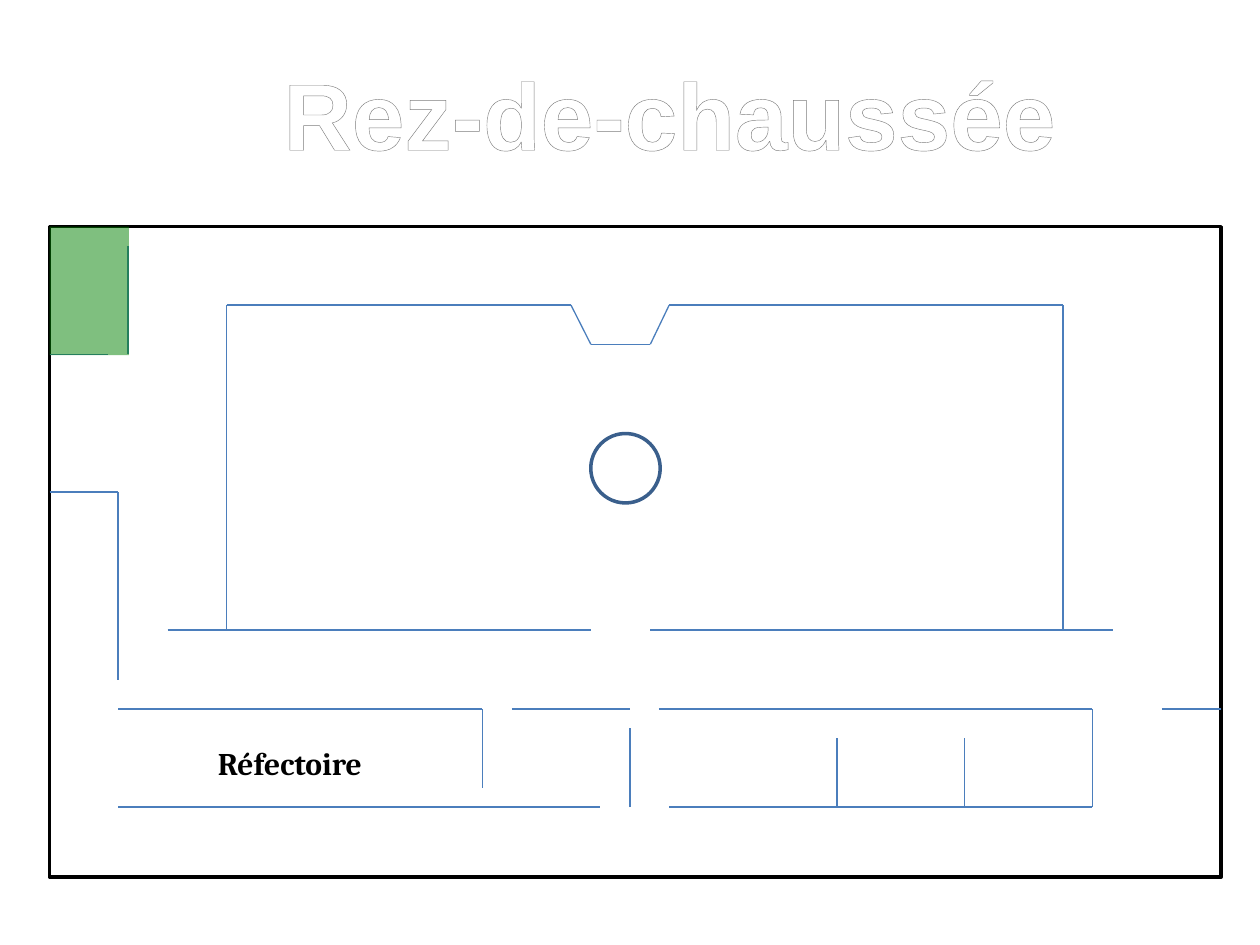
from lxml import etree
from pptx import Presentation
from pptx.dml.color import RGBColor
from pptx.enum.shapes import MSO_CONNECTOR, MSO_SHAPE
from pptx.enum.text import MSO_AUTO_SIZE, PP_ALIGN
from pptx.oxml import parse_xml
from pptx.oxml.ns import nsdecls, qn
from pptx.util import Cm, Pt

RECT, OVAL = MSO_SHAPE.RECTANGLE, MSO_SHAPE.OVAL
STRAIGHT = MSO_CONNECTOR.STRAIGHT
CENTER = PP_ALIGN.CENTER
GROW = MSO_AUTO_SIZE.SHAPE_TO_FIT_TEXT

COLORS = {"white": "FFFFFF", "black": "000000", "wall": "4B7EBC",
          "ring": "3A5F8C", "garden": "008000", "shine": "7F7F7F",
          "outline": "7D7D7D"}

BUILDING = (1, 4.57, 23.62, 13.11)
FOUNTAIN = (11.91, 8.74, 1.4, 1.4)
GARDEN = (1, 4.57, 1.6, 2.59)
TITLE = ("Rez-de-chaussée", (5.36, 1, 16.28, 2.57), "Arial", 54)
ROOM = ("Réfectoire", (2.38, 14.88, 6.93, 1.02), "Cambria", 18)
TITLE_STOPS = [(0, "white"), (9, "white"), (50, "shine"), (79, "white"), (100, "white")]

LEFT, RIGHT = 1, 24.61
COURT_LEFT, COURT_RIGHT, COURT_TOP, COURT_BOTTOM = 4.57, 21.43, 6.15, 12.7
HALL_LEFT, HALL_RIGHT, HALL_TOP, HALL_BOTTOM = 2.38, 22.02, 14.29, 16.27
NICHE_BOTTOM = 6.94

WALLS = [
    [(2.58, 4.96), (2.58, 7.14)],
    [(2.18, 7.14), (LEFT, 7.14)],
    [(COURT_LEFT, COURT_BOTTOM), (COURT_LEFT, COURT_TOP), (11.51, COURT_TOP),
     (11.91, NICHE_BOTTOM), (13.11, NICHE_BOTTOM), (13.49, COURT_TOP),
     (COURT_RIGHT, COURT_TOP), (COURT_RIGHT, COURT_BOTTOM)],
    [(3.38, COURT_BOTTOM), (11.91, COURT_BOTTOM)],
    [(13.11, COURT_BOTTOM), (22.43, COURT_BOTTOM)],
    [(LEFT, 9.92), (HALL_LEFT, 9.92), (HALL_LEFT, 13.7)],
    [(HALL_LEFT, HALL_TOP), (9.72, HALL_TOP), (9.72, 15.88)],
    [(10.32, HALL_TOP), (12.7, HALL_TOP)],
    [(13.28, HALL_TOP), (HALL_RIGHT, HALL_TOP),
     (HALL_RIGHT, HALL_BOTTOM), (13.49, HALL_BOTTOM)],
    [(23.42, HALL_TOP), (RIGHT, HALL_TOP)],
    [(HALL_LEFT, HALL_BOTTOM), (12.1, HALL_BOTTOM)],
    [(12.7, HALL_BOTTOM), (12.7, 14.68)],
    [(16.87, HALL_BOTTOM), (16.87, 14.88)],
    [(19.45, HALL_BOTTOM), (19.45, 14.88)],
]


def rgb(name):
    return RGBColor.from_string(COLORS[name])


def add_area(shapes, kind, box, fill, line=None):
    s = shapes.add_shape(kind, *map(Cm, box))
    s.shadow.inherit = False
    s.fill.solid()
    s.fill.fore_color.rgb = rgb(fill)
    if line:
        s.line.color.rgb = rgb(line)
        s.line.width = Pt(2)
    else:
        s.line.fill.background()
    return s


def add_wall(shapes, start, end):
    s = shapes.add_connector(STRAIGHT, *map(Cm, start + end))
    s.line.color.rgb = rgb("wall")
    s.line.width = Pt(0.75)
    etree.SubElement(s._element.spPr, qn("a:effectLst"))


def add_label(shapes, text, box, font, size):
    tf = shapes.add_textbox(*map(Cm, box)).text_frame
    tf.word_wrap = True
    tf.auto_size = GROW
    p = tf.paragraphs[0]
    p.alignment = CENTER
    r = p.add_run()
    r.text = text
    r.font.name, r.font.size, r.font.bold = font, Pt(size), True
    return r


def add_shine(r):
    stops = "".join(f'<a:gs pos="{at * 1000}"><a:srgbClr val="{COLORS[name]}"/></a:gs>'
                    for at, name in TITLE_STOPS)
    outline = (f'<a:ln {nsdecls("a")} w="{Pt(0.83)}"><a:solidFill>'
               f'<a:srgbClr val="{COLORS["outline"]}"/></a:solidFill></a:ln>')
    gradient = (f'<a:gradFill {nsdecls("a")}><a:gsLst>{stops}</a:gsLst>'
                '<a:lin ang="5400000" scaled="0"/></a:gradFill>')
    rPr = r.font._element
    rPr.insert(0, parse_xml(outline))
    rPr.insert(1, parse_xml(gradient))


prs = Presentation()
prs.slide_width, prs.slide_height = Cm(25.4), Cm(19.05)
shapes = prs.slides.add_slide(prs.slide_layouts[6]).shapes

add_area(shapes, RECT, BUILDING, "white", "black")
for wall in WALLS:
    for start, end in zip(wall, wall[1:]):
        add_wall(shapes, start, end)
add_area(shapes, OVAL, FOUNTAIN, "white", "ring")
add_shine(add_label(shapes, *TITLE))
garden = add_area(shapes, RECT, GARDEN, "garden")
tint = garden.fill._xPr.find(qn("a:solidFill"))[0]
etree.SubElement(tint, qn("a:alpha"), val="50000")
add_label(shapes, *ROOM).font.color.rgb = rgb("black")

prs.save("out.pptx")
